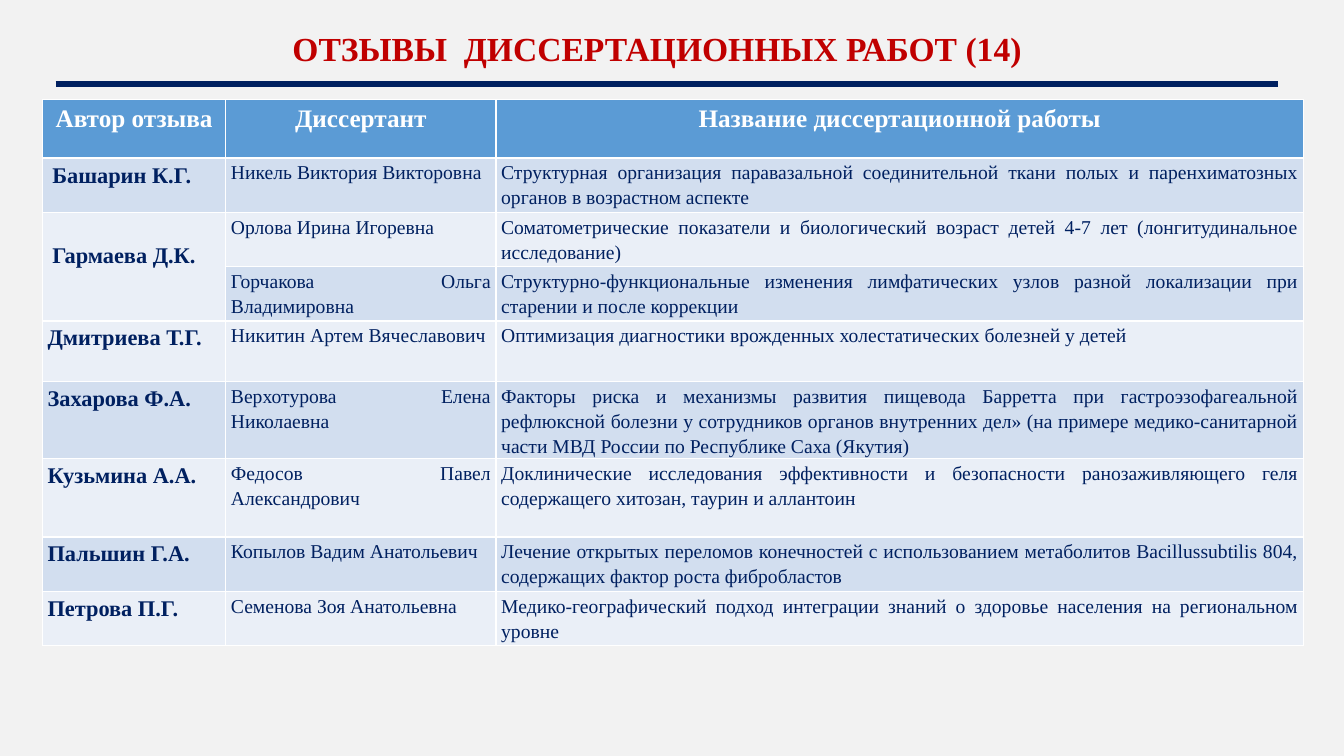
from pptx import Presentation
from pptx.dml.color import RGBColor as RGB
from pptx.enum.shapes import MSO_CONNECTOR as Line
from pptx.enum.text import MSO_ANCHOR as Anchor, PP_ALIGN as Align
from pptx.oxml.ns import qn
from pptx.util import Cm, Pt
from lxml.etree import SubElement as Sub

TITLE = "ОТЗЫВЫ  ДИССЕРТАЦИОННЫХ РАБОТ (14)"
HEAD = ("Автор отзыва", "Диссертант", "Название диссертационной работы")
ROWS = [
    ("Башарин К.Г.", "Никель Виктория Викторовна",
     "Структурная организация паравазальной соединительной ткани полых и "
     "паренхиматозных органов в возрастном аспекте"),
    ("Гармаева Д.К.", "Орлова Ирина Игоревна",
     "Соматометрические показатели и биологический возраст детей 4-7 лет "
     "(лонгитудинальное исследование)"),
    ("", "Горчакова Ольга Владимировна",
     "Структурно-функциональные изменения лимфатических узлов разной "
     "локализации при старении и после коррекции"),
    ("Дмитриева Т.Г.", "Никитин Артем Вячеславович",
     "Оптимизация диагностики врожденных холестатических болезней у детей"),
    ("Захарова Ф.А.", "Верхотурова Елена Николаевна",
     "Факторы риска и механизмы развития пищевода Барретта при "
     "гастроэзофагеальной рефлюксной болезни у сотрудников органов внутренних "
     "дел» (на примере медико-санитарной части МВД России по Республике Саха "
     "(Якутия)"),
    ("Кузьмина А.А.", "Федосов Павел Александрович",
     "Доклинические исследования эффективности и безопасности "
     "ранозаживляющего геля содержащего хитозан, таурин и аллантоин"),
    ("Пальшин Г.А.", "Копылов Вадим Анатольевич",
     "Лечение открытых переломов конечностей с использованием метаболитов "
     "Bacillussubtilis 804, содержащих фактор роста фибробластов"),
    ("Петрова П.Г.", "Семенова Зоя Анатольевна",
     "Медико-географический подход интеграции знаний о здоровье населения на "
     "региональном уровне"),
]
WIDTHS = (4.62, 6.81, 20.35)
HEIGHTS = (1.47, 1.37, 1.37, 1.37, 1.52, 1.93, 1.98, 1.37, 1.37)
COLORS = {name: RGB.from_string(code) for name, code in {
    "back": "F2F2F2", "title": "C00000", "navy": "002060", "white": "FFFFFF",
    "head": "5B9BD5", "odd": "D2DEEF", "even": "EAEFF7"}.items()}

# Text formats: font values, then paragraph values
TEXT = {
    "title": (dict(size=Pt(24), bold=True, color="title"),
              dict(alignment=Align.CENTER, line_spacing=0.9)),
    "head": (dict(size=Pt(18), bold=True, color="white"),
             dict(alignment=Align.CENTER)),
    "first": (dict(size=Pt(16), bold=True, color="navy"),
              dict(alignment=Align.LEFT)),
    "author": (dict(size=Pt(16), bold=True, color="navy"),
               dict(alignment=Align.LEFT, line_spacing=1.15)),
    "body": (dict(size=Pt(14), bold=False, color="navy"),
             dict(alignment=Align.JUSTIFY, line_spacing=1.15)),
}
# Cell margins in cm: sides, top, bottom
WIDE, TIGHT, LOW = (0.25, 0.13, 0.13), (0.13, 0.03, 0.03), (0.25, 0.78, 0.13)


def put(frame, text, style):
    """Write one paragraph in a named text format."""
    par = frame.paragraphs[0]
    run = par.add_run()
    run.text = text
    font, lines = TEXT[style]
    run.font.name = "Times New Roman"
    for key, val in font.items():
        if key == "color":
            run.font.color.rgb = COLORS[val]
        else:
            setattr(run.font, key, val)
    for key, val in lines.items():
        setattr(par, key, val)


def look(row, col):
    """Give the text format and margins of a cell."""
    if row == 0:
        return "head", WIDE
    if col:
        return "body", TIGHT
    return {1: ("first", WIDE), 2: ("first", LOW)}.get(row, ("author", TIGHT))


def add_grid(slide):
    data = [HEAD, *ROWS]
    grid = slide.shapes.add_table(
        len(data), len(HEAD), Cm(1.07), Cm(2.51),
        Cm(sum(WIDTHS)), Cm(sum(HEIGHTS))).table
    for col, width in zip(grid.columns, WIDTHS):
        col.width = Cm(width)
    for row, height in zip(grid.rows, HEIGHTS):
        row.height = Cm(height)
    for r, texts in enumerate(data):
        band = "head" if r == 0 else "odd" if r % 2 else "even"
        for c, text in enumerate(texts):
            cell = grid.cell(r, c)
            cell.fill.solid()
            cell.fill.fore_color.rgb = COLORS[band]
            style, (side, top, low) = look(r, c)
            cell.margin_left = cell.margin_right = Cm(side)
            cell.margin_top, cell.margin_bottom = Cm(top), Cm(low)
            if text:
                put(cell.text_frame, text, style)
    grid.cell(2, 0).merge(grid.cell(3, 0))


def main():
    deck = Presentation()
    deck.slide_width, deck.slide_height = Cm(33.87), Cm(19.05)
    slide = deck.slides.add_slide(deck.slide_layouts[5])
    slide.background.fill.solid()
    slide.background.fill.fore_color.rgb = COLORS["back"]

    title = slide.shapes.title
    box = dict(left=1.6, top=0.46, width=29.92, height=1.65)
    for key, val in box.items():
        setattr(title, key, Cm(val))
    title.text_frame.vertical_anchor = Anchor.MIDDLE
    put(title.text_frame, TITLE, "title")

    add_grid(slide)

    rule = slide.shapes.add_connector(
        Line.STRAIGHT, Cm(1.4), Cm(2.11), Cm(32.21), Cm(2.11))
    rule.line.color.rgb = COLORS["navy"]
    rule.line.width = Pt(4.5)
    Sub(rule._element.spPr, qn("a:effectLst"))
    deck.save("out.pptx")


if __name__ == "__main__":
    main()
